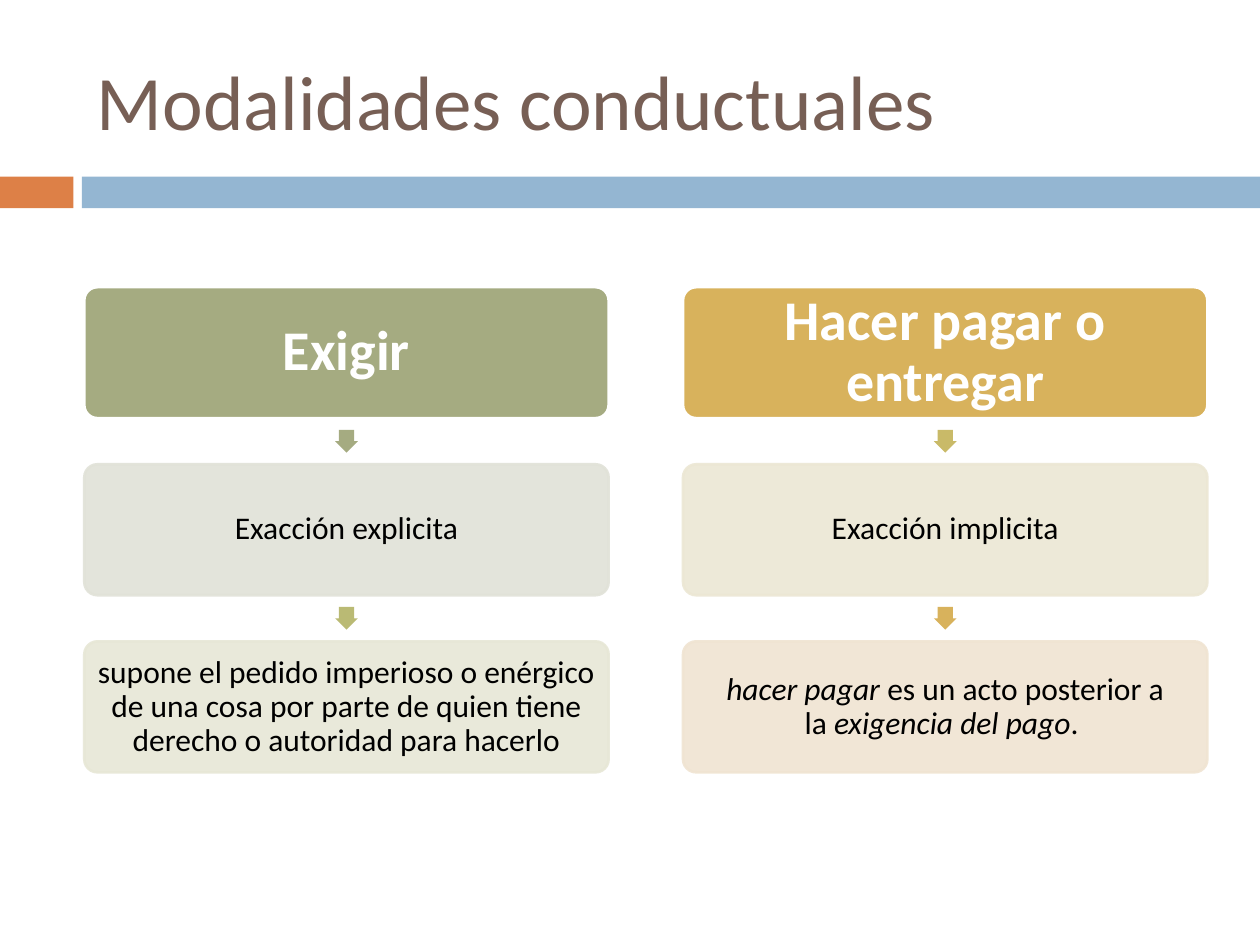
from lxml import etree
from pptx import Presentation
from pptx import util as u
from pptx.dml.color import RGBColor
from pptx.enum import shapes, text
from pptx.oxml import ns

BROWN = RGBColor(0x77, 0x5F, 0x55)
ORANGE = RGBColor(0xDD, 0x80, 0x47)
BLUE = RGBColor(0x94, 0xB6, 0xD2)
WHITE = RGBColor(0xFF, 0xFF, 0xFF)
BLACK = RGBColor(0, 0, 0)
SAGE = RGBColor(0xA5, 0xAB, 0x81)
MOSS = RGBColor(0xBA, 0xBA, 0x74)
OLIVE = RGBColor(0xC9, 0xBA, 0x68)
GOLD = RGBColor(0xD8, 0xB2, 0x5C)
MIST = RGBColor(0xE1, 0xE2, 0xD8)
PALE = RGBColor(0xE7, 0xE7, 0xD6)
CREAM = RGBColor(0xEC, 0xE7, 0xD4)
SAND = RGBColor(0xF0, 0xE4, 0xD2)

KIND = shapes.MSO_SHAPE
LEFT, TOP = 1.7, 5.79
WIDE, HIGH = 10.57, 2.64
STEP, PITCH = 12.07, 3.57
ARROW = 0.46

# Each column: heading, its fill, then (arrow fill, card fill, runs).
# A run is (wording, italic).
COLUMNS = [
    ("Exigir", SAGE, [
        (SAGE, MIST, [("Exacción explicita", False)]),
        (MOSS, PALE, [("supone el pedido imperioso o enérgico de una cosa "
                       "por parte de quien tiene derecho o autoridad para "
                       "hacerlo", False)]),
    ]),
    ("Hacer pagar o entregar", GOLD, [
        (OLIVE, CREAM, [("Exacción implicita", False)]),
        (GOLD, SAND, [("hacer pagar", True),
                      ("\u00a0es un acto posterior a la\u00a0", False),
                      ("exigencia del pago", True),
                      (".\u00a0", False)]),
    ]),
]


def write(shape, runs, size=18, color=BLACK, bold=False,
          align=text.PP_ALIGN.CENTER, inset=0.09, space=0.9):
    frame = shape.text_frame
    frame.word_wrap = True
    frame.vertical_anchor = text.MSO_ANCHOR.MIDDLE
    frame.margin_left = frame.margin_right = u.Cm(inset)
    frame.margin_top = frame.margin_bottom = u.Cm(inset)
    par = frame.paragraphs[0]
    par.alignment = align
    par.line_spacing = space
    for words, slant in runs:
        run = par.add_run()
        run.text = words
        font = run.font
        font.name, font.size = "Calibri", u.Pt(size)
        font.bold, font.italic = bold, slant
        font.color.rgb = color


def block(slide, kind, x, y, w, h, fill):
    shape = slide.shapes.add_shape(kind, u.Cm(x), u.Cm(y), u.Cm(w), u.Cm(h))
    shape.shadow.inherit = False
    shape.fill.solid()
    shape.fill.fore_color.rgb = fill
    shape.line.fill.background()
    return shape


def card(slide, x, y, fill, edge):
    shape = block(slide, KIND.ROUNDED_RECTANGLE, x, y, WIDE, HIGH, fill)
    shape.adjustments[0] = 0.1
    shape.line.color.rgb = edge
    shape.line.width = u.Pt(1.5)
    return shape


def fade(shape, share):
    # Transparency of both fill and outline
    for color in shape._element.spPr.iter(ns.qn("a:srgbClr")):
        alpha = etree.SubElement(color, ns.qn("a:alpha"))
        alpha.set("val", str(share * 1000))


def arrow(slide, x, y, fill):
    shape = block(slide, KIND.RIGHT_ARROW, x, y, ARROW, ARROW, fill)
    shape.rotation = 90
    shape.adjustments[0] = 0.667
    shape.adjustments[1] = 0.5


def column(slide, x, head, fill, steps):
    write(card(slide, x, TOP, fill, WHITE), [(head, False)],
          size=32, color=WHITE, bold=True, inset=0.1)
    for row, (tint, pale, runs) in enumerate(steps, 1):
        y = TOP + row * PITCH
        gap = PITCH - HIGH
        arrow(slide, x + (WIDE - ARROW) / 2, y - (gap + ARROW) / 2, tint)
        box = card(slide, x, y, pale, pale)
        fade(box, 90)
        write(box, runs)


def main():
    deck = Presentation()
    deck.slide_width, deck.slide_height = u.Cm(25.4), u.Cm(19.05)
    slide = deck.slides.add_slide(deck.slide_layouts[6])

    # Band under the title
    block(slide, KIND.RECTANGLE, 0, 3.56, 1.48, 0.64, ORANGE)
    block(slide, KIND.RECTANGLE, 1.65, 3.56, 23.75, 0.64, BLUE)

    # Title
    title = slide.shapes.add_textbox(u.Cm(1.7), u.Cm(0.64),
                                     u.Cm(22.66), u.Cm(2.74))
    write(title, [("Modalidades conductuales", False)], size=44, color=BROWN,
          align=text.PP_ALIGN.LEFT, inset=0.25, space=1.0)

    # Two flows, side by side
    for col, (head, fill, steps) in enumerate(COLUMNS):
        column(slide, LEFT + col * STEP, head, fill, steps)

    deck.save("out.pptx")


main()
